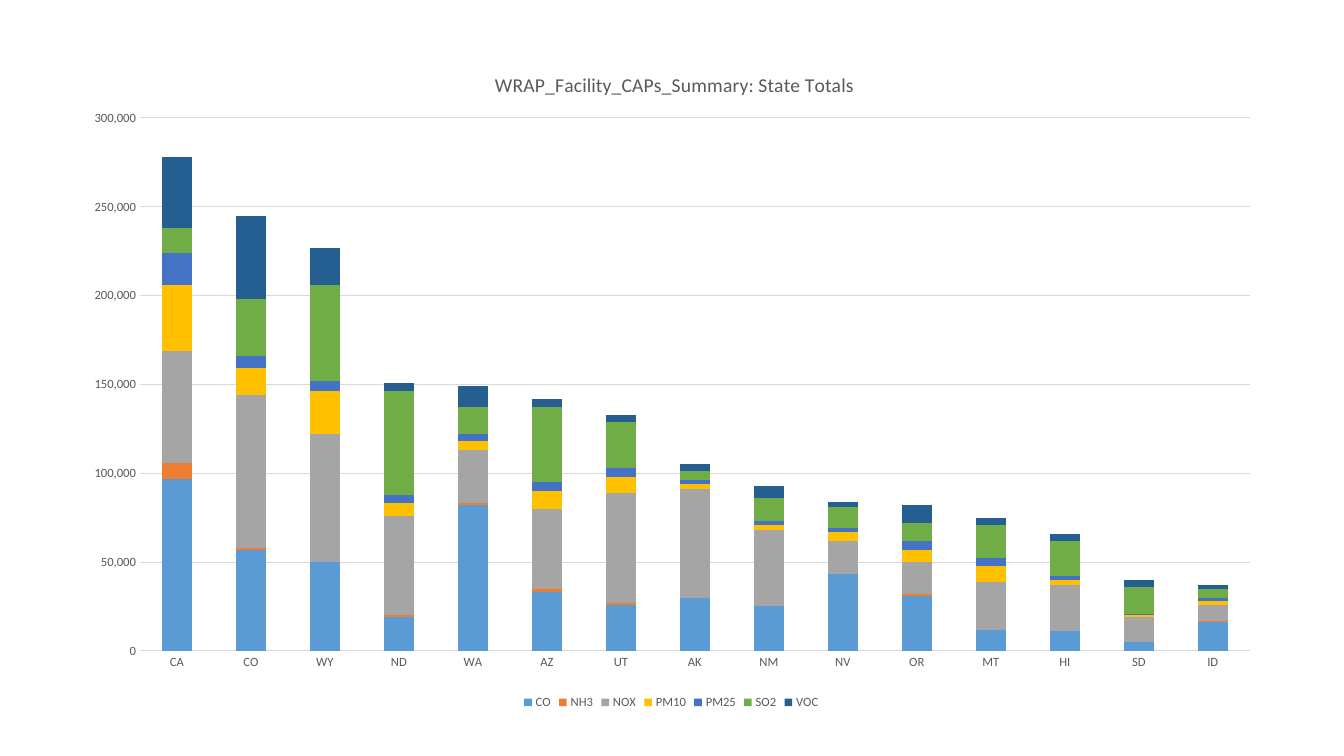
from dataclasses import dataclass

from lxml.etree import SubElement
from pptx import Presentation
from pptx.chart.data import CategoryChartData
from pptx.dml.color import RGBColor
from pptx.enum.chart import XL_CHART_TYPE as ChartType
from pptx.enum.chart import XL_LEGEND_POSITION as LegendPosition
from pptx.enum.chart import XL_TICK_MARK as TickMark
from pptx.oxml.ns import qn
from pptx.util import Pt

TITLE = "WRAP_Facility_CAPs_Summary: State Totals"
STATES = ["CA", "CO", "WY", "ND", "WA", "AZ", "UT", "AK", "NM", "NV",
          "OR", "MT", "HI", "SD", "ID"]
# Emissions in thousands, one value per state
POLLUTANTS = {
    "CO": [97, 57, 50, 19, 82, 33, 26, 30, 25, 43, 31, 12, 11, 5, 16],
    "NH3": [9, 1, 0, 1, 1, 2, 1, 0, 0, 0, 1, 0, 0, 0, 1],
    "NOX": [63, 86, 72, 56, 30, 45, 62, 61, 43, 19, 18, 27, 26, 14, 9],
    "PM10": [37, 15, 24, 7, 5, 10, 9, 3, 3, 5, 7, 9, 3, 1, 2],
    "PM25": [18, 7, 6, 5, 4, 5, 5, 2, 2, 2, 5, 4, 2, 1, 2],
    "SO2": [14, 32, 54, 58, 15, 42, 26, 5, 13, 12, 10, 19, 20, 15, 5],
    "VOC": [40, 47, 21, 5, 12, 5, 4, 4, 7, 3, 10, 4, 4, 4, 2],
}
SLIDE_SIZE = (960, 540)
CHART_BOX = (49.7, 31, 859.7, 478.8)  # left, top, width, height
PLOT_BOX = (100, 84.3, 792.8, 380.7)
TITLE_CORNER = (351, 48)


@dataclass(frozen=True)
class Theme:
    font: str = "Calibri"
    text: str = "595959"
    line: str = "D9D9D9"
    series: tuple = ("5B9BD5", "ED7D31", "A5A5A5", "FFC000",
                     "4472C4", "70AD47", "255E91")
    title_size: float = 14
    label_size: float = 9
    line_width: float = 0.75


THEME = Theme()


def rgb(value):
    return RGBColor.from_string(value)


def format_font(font, size=THEME.label_size, color=THEME.text):
    font.name, font.size, font.bold = THEME.font, Pt(size), False
    font.color.rgb = rgb(color)


def set_text(frame, text, **font_format):
    paragraph = frame.paragraphs[0]
    run = paragraph.add_run()
    run.text = text
    format_font(run.font, **font_format)


def format_line(line):
    line.color.rgb = rgb(THEME.line)
    line.width = Pt(THEME.line_width)


def place(element, index, left, top, width=None, height=None):
    """Fix a chart part at slide coordinates, as fractions of the chart."""
    for old_layout in element.findall(qn("c:layout")):
        element.remove(old_layout)
    layout = SubElement(element, qn("c:layout"))
    element.insert(index, layout)
    manual = SubElement(layout, qn("c:manualLayout"))

    def add(name, value):
        SubElement(manual, qn(f"c:{name}")).set("val", str(value))

    chart_left, chart_top, chart_width, chart_height = CHART_BOX
    if width:
        add("layoutTarget", "inner")
    add("xMode", "edge")
    add("yMode", "edge")
    add("x", (left - chart_left) / chart_width)
    add("y", (top - chart_top) / chart_height)
    if width:
        add("w", width / chart_width)
        add("h", height / chart_height)


def add_emissions_chart(slide):
    data = CategoryChartData(number_format="#,##0")
    data.categories = STATES
    for name, thousands in POLLUTANTS.items():
        data.add_series(name, [value * 1000 for value in thousands])
    chart = slide.shapes.add_chart(
        ChartType.COLUMN_STACKED, *map(Pt, CHART_BOX), data).chart
    format_font(chart.font)

    plot = chart.plots[0]
    plot.gap_width, plot.overlap = 150, 100
    plot.vary_by_categories = False
    for series, color in zip(plot.series, THEME.series):
        series.format.fill.solid()
        series.format.fill.fore_color.rgb = rgb(color)
        series.invert_if_negative = False

    set_text(chart.chart_title.text_frame, TITLE, size=THEME.title_size)
    chart.chart_title.include_in_layout = False
    chart.has_legend = True
    chart.legend.position = LegendPosition.BOTTOM
    chart.legend.include_in_layout = False
    format_font(chart.legend.font)
    return chart


def format_axes(chart):
    states, emissions = chart.category_axis, chart.value_axis
    for axis in (states, emissions):
        axis.major_tick_mark = axis.minor_tick_mark = TickMark.NONE
        format_font(axis.tick_labels.font)
    format_line(states.format.line)
    emissions.format.line.fill.background()
    emissions.has_major_gridlines = True
    format_line(emissions.major_gridlines.format.line)
    emissions.minimum_scale, emissions.maximum_scale = 0, 300000
    emissions.major_unit = 50000
    emissions.tick_labels.number_format = "#,##0"
    emissions.tick_labels.number_format_is_linked = False


def main():
    presentation = Presentation()
    presentation.slide_width, presentation.slide_height = map(Pt, SLIDE_SIZE)
    slide = presentation.slides.add_slide(presentation.slide_layouts[6])
    chart = add_emissions_chart(slide)
    format_axes(chart)
    chart_element = chart.element.find(qn("c:chart"))
    place(chart_element.find(qn("c:plotArea")), 0, *PLOT_BOX)
    place(chart_element.find(qn("c:title")), 1, *TITLE_CORNER)
    presentation.save("out.pptx")


if __name__ == "__main__":
    main()
